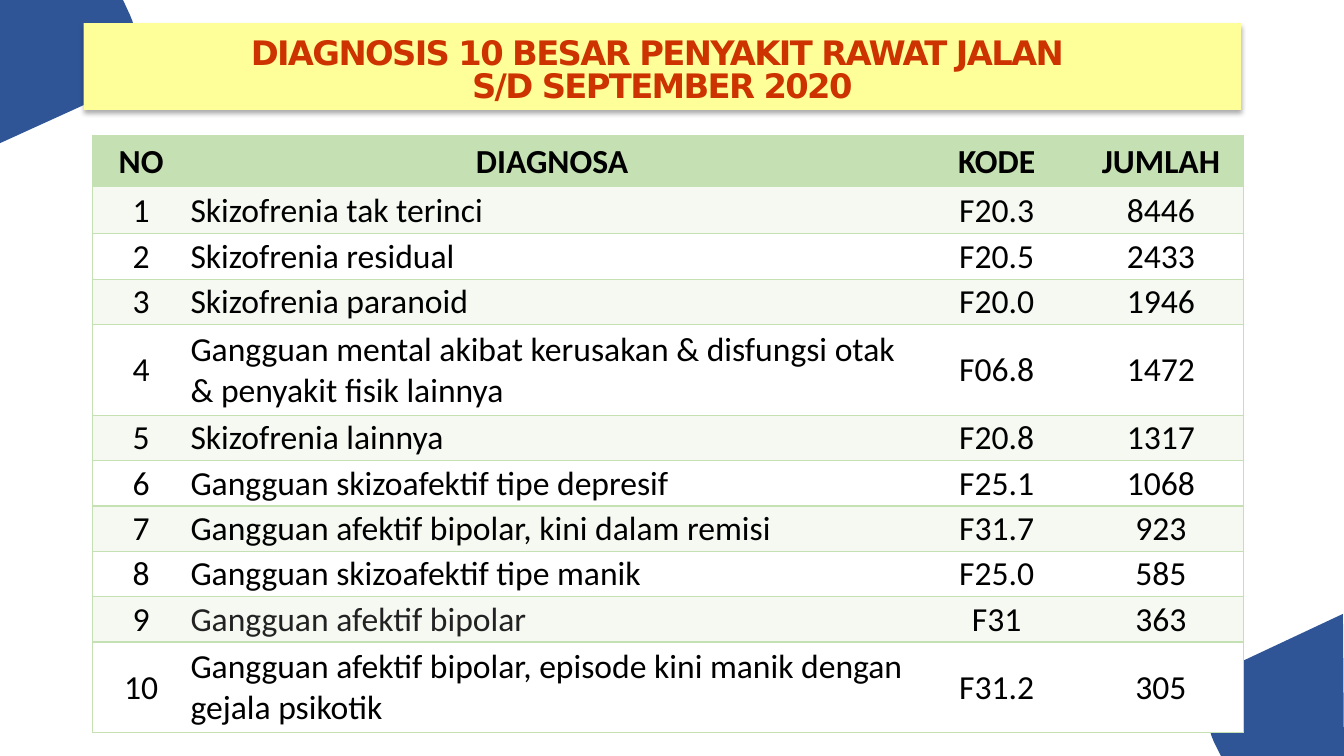
from dataclasses import dataclass

from lxml import etree
from pptx import Presentation
from pptx.dml.color import RGBColor
from pptx.enum.shapes import MSO_SHAPE
from pptx.enum.text import MSO_ANCHOR, PP_ALIGN
from pptx.oxml.ns import qn
from pptx.util import Inches, Pt

RECTANGLE = MSO_SHAPE.RECTANGLE
MIDDLE, BOTTOM = MSO_ANCHOR.MIDDLE, MSO_ANCHOR.BOTTOM
CENTER, LEFT = PP_ALIGN.CENTER, PP_ALIGN.LEFT

COLORS = {
    "corner": "2F5597",
    "banner": "FFFF99",
    "title": "CC3300",
    "shadow": "000000",
    "header": "C5E0B3",
    "border": "C5E0B3",
    "odd_row": "F5F9F2",
    "even_row": "FFFFFF",
    "text": "000000",
    "soft_text": "222222",
}

Point = tuple[float, float]


@dataclass(frozen=True)
class Corner:
    """Straight edges before and after one Bezier curve with two handles."""
    before: list[Point]
    handles: tuple[Point, Point]
    after: list[Point]


@dataclass(frozen=True)
class Diagnosis:
    name: str
    code: str
    count: int
    color: str = "text"
    lines: int = 1


CORNERS = [
    Corner([(13.33, 7.5), (12.11, 7.5), (12.04, 7.36)],
           ((11.9, 7.06), (12.03, 6.69)),
           [(12.34, 6.55), (13.32, 6.09)]),
    Corner([(0, 0), (1.22, 0), (1.29, 0.15)],
           ((1.43, 0.46), (1.29, 0.83)),
           [(0.99, 0.97), (0, 1.42)]),
]

TITLE = "DIAGNOSIS 10 BESAR PENYAKIT RAWAT JALAN \vS/D SEPTEMBER 2020"
HEADINGS = ["NO", "DIAGNOSA", "KODE", "JUMLAH"]
DIAGNOSES = [
    Diagnosis("Skizofrenia tak terinci", "F20.3", 8446),
    Diagnosis("Skizofrenia residual", "F20.5", 2433),
    Diagnosis("Skizofrenia paranoid", "F20.0", 1946),
    Diagnosis("Gangguan mental akibat kerusakan & disfungsi otak & penyakit fisik lainnya",
              "F06.8", 1472, lines=2),
    Diagnosis("Skizofrenia lainnya", "F20.8", 1317),
    Diagnosis("Gangguan skizoafektif tipe depresif", "F25.1", 1068),
    Diagnosis("Gangguan afektif bipolar, kini dalam remisi", "F31.7", 923),
    Diagnosis("Gangguan skizoafektif tipe manik", "F25.0", 585),
    Diagnosis("Gangguan afektif bipolar", "F31", 363, color="soft_text"),
    Diagnosis("Gangguan afektif bipolar, episode kini manik dengan gejala psikotik",
              "F31.2", 305, lines=2),
]
COLUMN_WIDTHS = [0.96, 7.19, 1.63, 1.63]
HEADER_HEIGHT, FIRST_ROW_HEIGHT, LINE_HEIGHT = 0.5, 0.47, 0.45
NAME_COLUMN = 1


def rgb(name: str) -> RGBColor:
    return RGBColor.from_string(COLORS[name])


def curve_points(start: Point, handles: tuple[Point, Point], end: Point,
                 steps: int = 16) -> list[Point]:
    """Sample the inner points of a cubic Bezier curve."""
    points = []
    for step in range(1, steps):
        t = step / steps
        weights = ((1 - t) ** 3, 3 * t * (1 - t) ** 2, 3 * t ** 2 * (1 - t), t ** 3)
        controls = (start, *handles, end)
        points.append((sum(w * x for w, (x, _) in zip(weights, controls)),
                       sum(w * y for w, (_, y) in zip(weights, controls))))
    return points


def add_corner(slide, corner: Corner) -> None:
    curve = curve_points(corner.before[-1], corner.handles, corner.after[0])
    outline = [(Inches(x), Inches(y)) for x, y in corner.before + curve + corner.after]
    builder = slide.shapes.build_freeform(*outline[0])
    builder.add_line_segments(outline[1:], close=True)
    shape = builder.convert_to_shape()
    shape.shadow.inherit = False
    shape.fill.solid()
    shape.fill.fore_color.rgb = rgb("corner")
    shape.line.fill.background()


def add_drop_shadow(shape) -> None:
    shape.shadow.inherit = False
    effects = shape.element.spPr.find(qn("a:effectLst"))
    shadow = etree.SubElement(effects, qn("a:outerShdw"), blurRad=str(Pt(3.5)),
                              dist=str(Pt(2.2)), dir="5400000", rotWithShape="0")
    color = etree.SubElement(shadow, qn("a:srgbClr"), val=COLORS["shadow"])
    etree.SubElement(color, qn("a:alpha"), val="32000")


def style_paragraph(paragraph, font_name: str, size: float, color: str,
                    bold: bool, alignment) -> None:
    paragraph.alignment = alignment
    font = paragraph.font
    font.name, font.size, font.bold = font_name, Pt(size), bold
    font.color.rgb = rgb(color)


def add_title(slide) -> None:
    banner = slide.shapes.add_shape(RECTANGLE, Inches(0.83), Inches(0.23),
                                    Inches(11.48), Inches(0.86))
    banner.fill.solid()
    banner.fill.fore_color.rgb = rgb("banner")
    banner.line.fill.background()
    add_drop_shadow(banner)
    frame = banner.text_frame
    frame.word_wrap = True
    frame.vertical_anchor = BOTTOM
    paragraph = frame.paragraphs[0]
    paragraph.text = TITLE
    paragraph.line_spacing = 0.8
    style_paragraph(paragraph, "DejaVu Sans", 24.1, "title", True, CENTER)
    for run in paragraph.runs:
        run.font._element.set("spc", "-120")


def set_borders(cell, visible_sides: str) -> None:
    """Draw the named sides (L, R, T, B) and clear the others."""
    properties = cell._tc.get_or_add_tcPr()
    for position, side in enumerate("LRTB"):
        line = etree.Element(qn(f"a:ln{side}"), w=str(Pt(1)))
        if side in visible_sides:
            fill = etree.SubElement(line, qn("a:solidFill"))
            etree.SubElement(fill, qn("a:srgbClr"), val=COLORS["border"])
        else:
            etree.SubElement(line, qn("a:noFill"))
        properties.insert(position, line)


def fill_row(table, row: int, texts: list[str], fill: str,
             name_color: str = "text") -> None:
    is_header = row == 0
    for column, text in enumerate(texts):
        cell = table.cell(row, column)
        cell.fill.solid()
        cell.fill.fore_color.rgb = rgb(fill)
        cell.vertical_anchor = MIDDLE
        cell.margin_left = cell.margin_right = cell.margin_top = Inches(0.01)
        cell.margin_bottom = 0
        is_name = column == NAME_COLUMN
        paragraph = cell.text_frame.paragraphs[0]
        paragraph.text = text
        style_paragraph(paragraph, "Calibri", 24, name_color if is_name else "text",
                        is_header, LEFT if is_name and not is_header else CENTER)
        outer_side = {0: "L", len(texts) - 1: "R"}.get(column, "")
        set_borders(cell, "TB" + outer_side)


def add_diagnosis_table(slide) -> None:
    heights = [HEADER_HEIGHT, FIRST_ROW_HEIGHT]
    heights += [LINE_HEIGHT * diagnosis.lines for diagnosis in DIAGNOSES[1:]]
    table = slide.shapes.add_table(
        len(heights), len(HEADINGS), Inches(0.92), Inches(1.35),
        Inches(sum(COLUMN_WIDTHS)), Inches(sum(heights))).table
    table.first_row = table.horz_banding = False
    for column, width in zip(table.columns, COLUMN_WIDTHS):
        column.width = Inches(width)
    for row, height in zip(table.rows, heights):
        row.height = Inches(height)
    fill_row(table, 0, HEADINGS, "header")
    for number, diagnosis in enumerate(DIAGNOSES, start=1):
        texts = [str(number), diagnosis.name, diagnosis.code, str(diagnosis.count)]
        fill_row(table, number, texts, "odd_row" if number % 2 else "even_row",
                 diagnosis.color)


def main() -> None:
    presentation = Presentation()
    presentation.slide_width, presentation.slide_height = Inches(13.33), Inches(7.5)
    slide = presentation.slides.add_slide(presentation.slide_layouts[6])
    for corner in CORNERS:
        add_corner(slide, corner)
    add_title(slide)
    add_diagnosis_table(slide)
    presentation.save("out.pptx")


if __name__ == "__main__":
    main()
